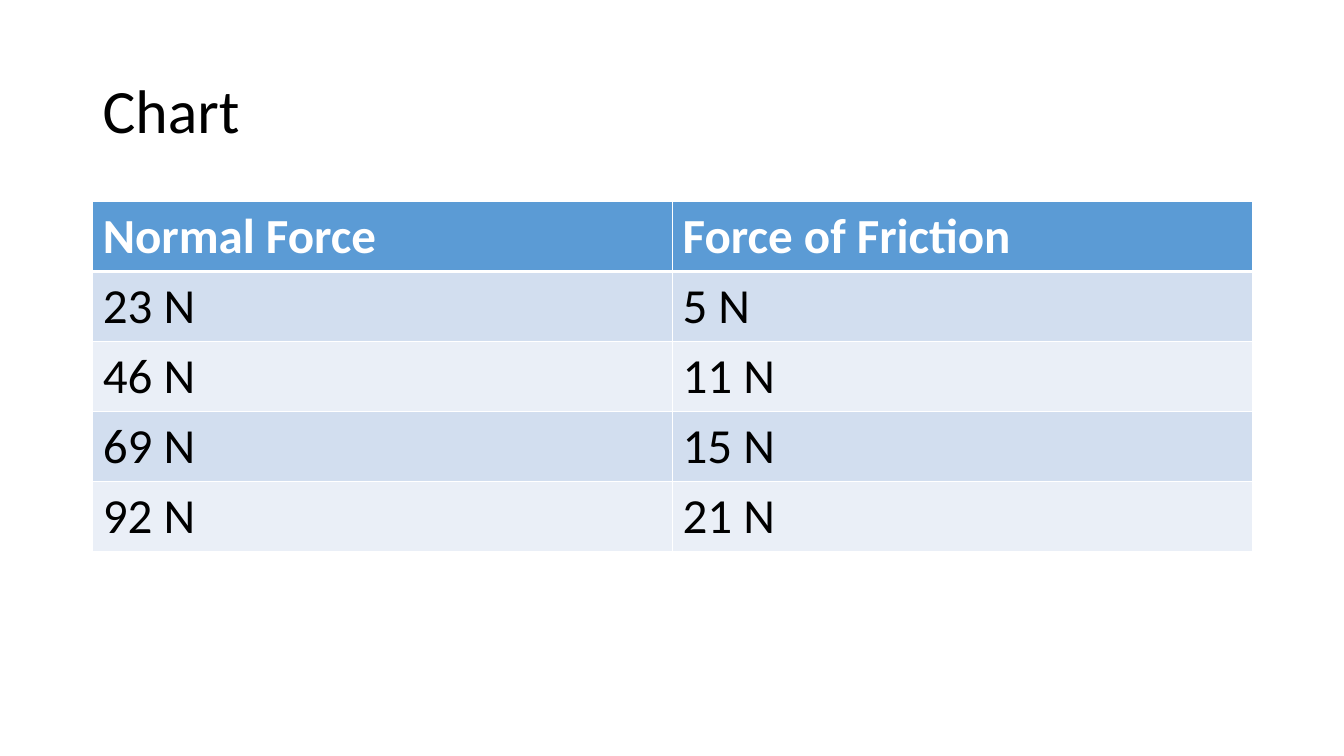
"""Build a slide with a table of normal force against force of friction."""
from lxml.etree import SubElement
from pptx import Presentation
from pptx.dml.color import RGBColor
from pptx.enum.text import MSO_ANCHOR
from pptx.oxml.ns import qn
from pptx.util import Inches, Pt

FONT = "Calibri"
BLACK = RGBColor(0x00, 0x00, 0x00)
WHITE = RGBColor(0xFF, 0xFF, 0xFF)
HEADER_BLUE = RGBColor(0x5B, 0x9B, 0xD5)
BANDS = [RGBColor(0xEA, 0xEF, 0xF7), RGBColor(0xD2, 0xDE, 0xEF)]

MEASUREMENTS = [
    ("Normal Force", "Force of Friction"),
    ("23 N", "5 N"),
    ("46 N", "11 N"),
    ("69 N", "15 N"),
    ("92 N", "21 N"),
]


def style_paragraph(paragraph, size, color, bold=False):
    paragraph.font.name = FONT
    paragraph.font.size = Pt(size)
    paragraph.font.color.rgb = color
    paragraph.font.bold = bold


def add_border(cell, side, points):
    line = SubElement(cell._tc.get_or_add_tcPr(), qn(f"a:ln{side}"), w=str(Pt(points)))
    fill = SubElement(line, qn("a:solidFill"))
    SubElement(fill, qn("a:srgbClr"), val=str(WHITE))


presentation = Presentation()
presentation.slide_width = Inches(13.33)
presentation.slide_height = Inches(7.5)
slide = presentation.slides.add_slide(presentation.slide_layouts[6])

left, width = Inches(0.92), Inches(11.5)
row_height = Inches(0.695)

title = slide.shapes.add_textbox(left, Inches(0.4), width, Inches(1.45))
title.text_frame.word_wrap = True
title.text_frame.vertical_anchor = MSO_ANCHOR.MIDDLE
heading = title.text_frame.paragraphs[0]
heading.text = "Chart"
heading.line_spacing = 0.9
style_paragraph(heading, 44, BLACK)

table = slide.shapes.add_table(
    len(MEASUREMENTS), len(MEASUREMENTS[0]),
    left, Inches(2), width, row_height * len(MEASUREMENTS),
).table

for row, values in enumerate(MEASUREMENTS):
    is_header = row == 0
    for column, value in enumerate(values):
        cell = table.cell(row, column)
        cell.text = value
        style_paragraph(
            cell.text_frame.paragraphs[0], 35, WHITE if is_header else BLACK, is_header
        )
        add_border(cell, "L", 1)
        add_border(cell, "R", 1)
        add_border(cell, "T", 3 if row == 1 else 1)
        add_border(cell, "B", 3 if is_header else 1)
        cell.fill.solid()
        cell.fill.fore_color.rgb = HEADER_BLUE if is_header else BANDS[row % 2]

presentation.save("out.pptx")
